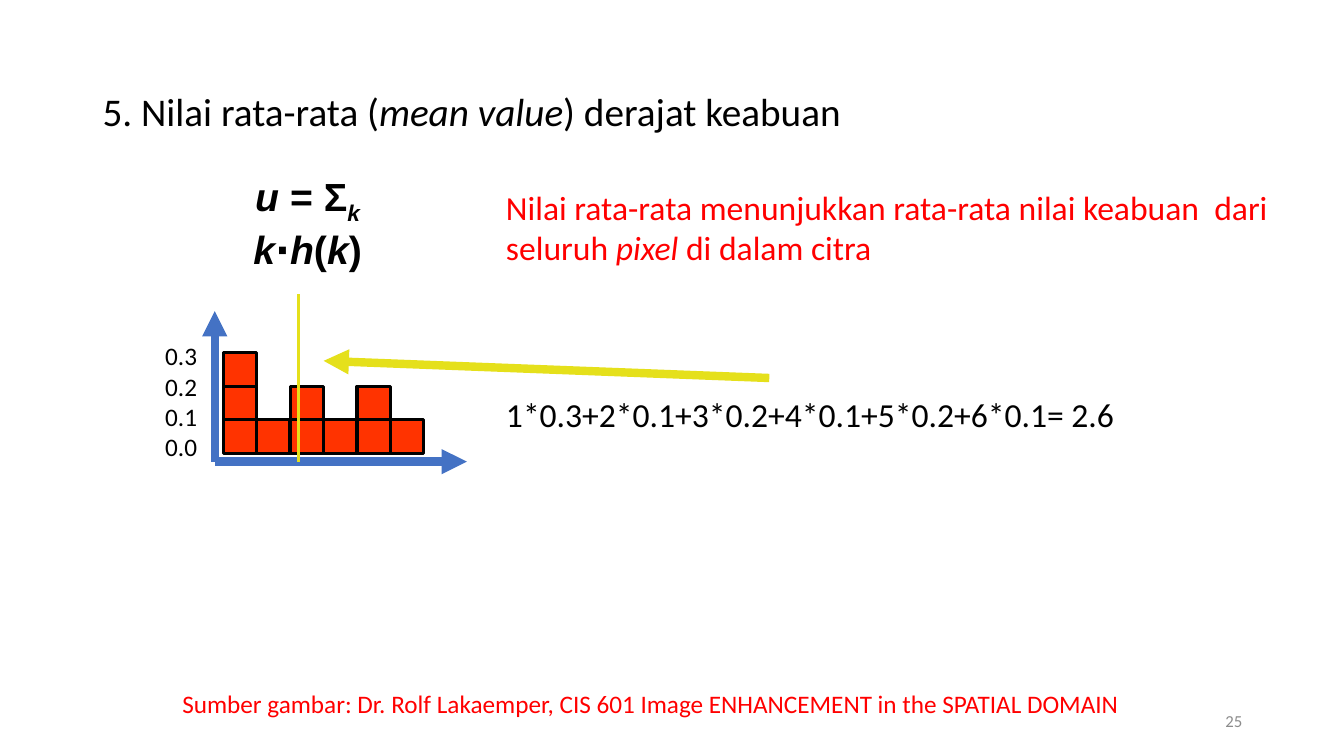
from lxml import etree
from pptx import Presentation
from pptx.dml.color import RGBColor
from pptx.enum.shapes import MSO_CONNECTOR, MSO_SHAPE
from pptx.enum.text import MSO_ANCHOR, PP_ALIGN
from pptx.oxml.ns import qn
from pptx.util import Inches, Pt

LEFT, CENTER, RIGHT = PP_ALIGN.LEFT, PP_ALIGN.CENTER, PP_ALIGN.RIGHT
TOP, MIDDLE = MSO_ANCHOR.TOP, MSO_ANCHOR.MIDDLE
STRAIGHT = MSO_CONNECTOR.STRAIGHT
RECTANGLE = MSO_SHAPE.RECTANGLE

BLACK = RGBColor(0x00, 0x00, 0x00)
RED = RGBColor(0xFF, 0x00, 0x00)
BAR_RED = RGBColor(0xFF, 0x33, 0x00)
AXIS_BLUE = RGBColor(0x44, 0x72, 0xC4)
YELLOW = RGBColor(0xE5, 0xE0, 0x1B)
GRAY = RGBColor(0x8C, 0x8C, 0x8C)

BAR_COUNTS = [3, 1, 2, 1, 2, 1]
LEVELS = ["0.3", "0.2", "0.1", "0.0"]
ITALIC = {"italic": True}
SUBSCRIPT = {"italic": True, "baseline": "-25000"}


def add_text(page, box, paragraphs, size, color=BLACK, font="Calibri", bold=False,
             align=LEFT, anchor=TOP, wrap=True, side_margin=0.1, line_spacing=None):
    """Place paragraphs, each a list of (text, format values) spans."""
    frame = page.shapes.add_textbox(*map(Inches, box)).text_frame
    settings = {"word_wrap": wrap, "vertical_anchor": anchor,
                "margin_left": Inches(side_margin), "margin_right": Inches(side_margin)}
    for name, value in settings.items():
        setattr(frame, name, value)
    for index, spans in enumerate(paragraphs):
        para = frame.add_paragraph() if index else frame.paragraphs[0]
        para.alignment = align
        para.line_spacing = line_spacing
        for text, extra in spans:
            span = para.add_run()
            span.text = text
            span.font.color.rgb = color
            values = {"name": font, "size": Pt(size), "bold": bold,
                      "italic": extra.get("italic", False)}
            for name, value in values.items():
                setattr(span.font, name, value)
            if "baseline" in extra:
                span.font._element.set("baseline", extra["baseline"])


def add_line(page, start, end, color, width, arrow=False):
    line = page.shapes.add_connector(STRAIGHT, *map(Inches, (*start, *end)))
    line.line.color.rgb = color
    line.line.width = Pt(width)
    if arrow:
        etree.SubElement(line.line._get_or_add_ln(), qn("a:tailEnd"), type="triangle")
    etree.SubElement(line._element.spPr, qn("a:effectLst"))


def add_heading(page, box):
    spans = [("5. Nilai rata-rata (", {}), ("mean value", ITALIC), (") derajat keabuan", {})]
    add_text(page, box, [spans], 28, line_spacing=0.9)


def add_formula(page, box):
    spans = [("u", ITALIC), (" = Σ", {}), ("k ", SUBSCRIPT), ("k", ITALIC), ("⋅", {}),
             ("h", ITALIC), ("(", {}), ("k", ITALIC), (")", {})]
    add_text(page, box, [spans], 28, font="Arial", bold=True, align=CENTER, side_margin=0.3)


def add_histogram(page, box):
    """Draw the histogram; its axes meet near the lower left corner of the box."""
    left, top, width, height = box
    cell = height / 5
    origin_x, origin_y = left + 0.59, top + height
    gap = cell / 4

    # Stacked cells
    for column, count in enumerate(BAR_COUNTS):
        for row in range(count):
            x = origin_x + gap + column * cell
            y = origin_y - gap - (row + 1) * cell
            block = page.shapes.add_shape(RECTANGLE, *map(Inches, (x, y, cell, cell)))
            block.shadow.inherit = False
            block.fill.solid()
            block.fill.fore_color.rgb = BAR_RED
            block.line.color.rgb = BLACK
            block.line.width = Pt(2.25)

    # Axes and level labels
    origin = (origin_x, origin_y)
    add_line(page, origin, (origin_x, origin_y - 4.5 * cell), AXIS_BLUE, 6, arrow=True)
    add_line(page, origin, (left + width, origin_y), AXIS_BLUE, 6, arrow=True)
    add_text(page, (left, top + 0.41, 0.52, 1.31), [[(level, {})] for level in LEVELS],
             18, wrap=False)

    # Mean marker
    mean_x = origin_x + 2.5 * cell
    add_line(page, (mean_x, origin_y), (mean_x, top), YELLOW, 2.25)


def add_explanation(page, box):
    """Place the description, the calculation and the arrow to the mean marker."""
    left, top, width, height = box
    description = [[("Nilai rata-rata menunjukkan rata-rata nilai keabuan  dari", {})],
                   [("seluruh ", {}), ("pixel", ITALIC), (" di dalam citra", {})]]
    add_text(page, (left, top, width, 0.91), description, 24, RED)
    add_text(page, (left, top + height - 0.5, 6.68, 0.5),
             [[("1*0.3+2*0.1+3*0.2+4*0.1+5*0.2+6*0.1= 2.6", {})]], 24)
    add_line(page, (left + 2.71, top + 1.95), (left - 1.71, top + 1.78), YELLOW, 6, arrow=True)


def add_footer(page, box):
    left, top, width, height = box
    source = "Sumber gambar: Dr. Rolf Lakaemper, CIS 601 Image ENHANCEMENT in the SPATIAL DOMAIN"
    add_text(page, box, [[(source, {})]], 18, RED)
    add_text(page, (left + 7.71, top + 0.17, 3, 0.4), [[("25", {})]], 12, GRAY,
             align=RIGHT, anchor=MIDDLE)


def main():
    deck = Presentation()
    deck.slide_width, deck.slide_height = Inches(13.33), Inches(7.5)
    page = deck.slides.add_slide(deck.slide_layouts[6])
    add_heading(page, (0.92, 0.87, 11.5, 0.6))
    add_formula(page, (1.84, 1.66, 2.42, 1.1))
    add_histogram(page, (1.54, 2.92, 3.09, 1.66))
    add_explanation(page, (4.92, 1.8, 7.9, 2.56))
    add_footer(page, (1.71, 6.78, 11.03, 0.71))
    deck.save("out.pptx")


if __name__ == "__main__":
    main()
